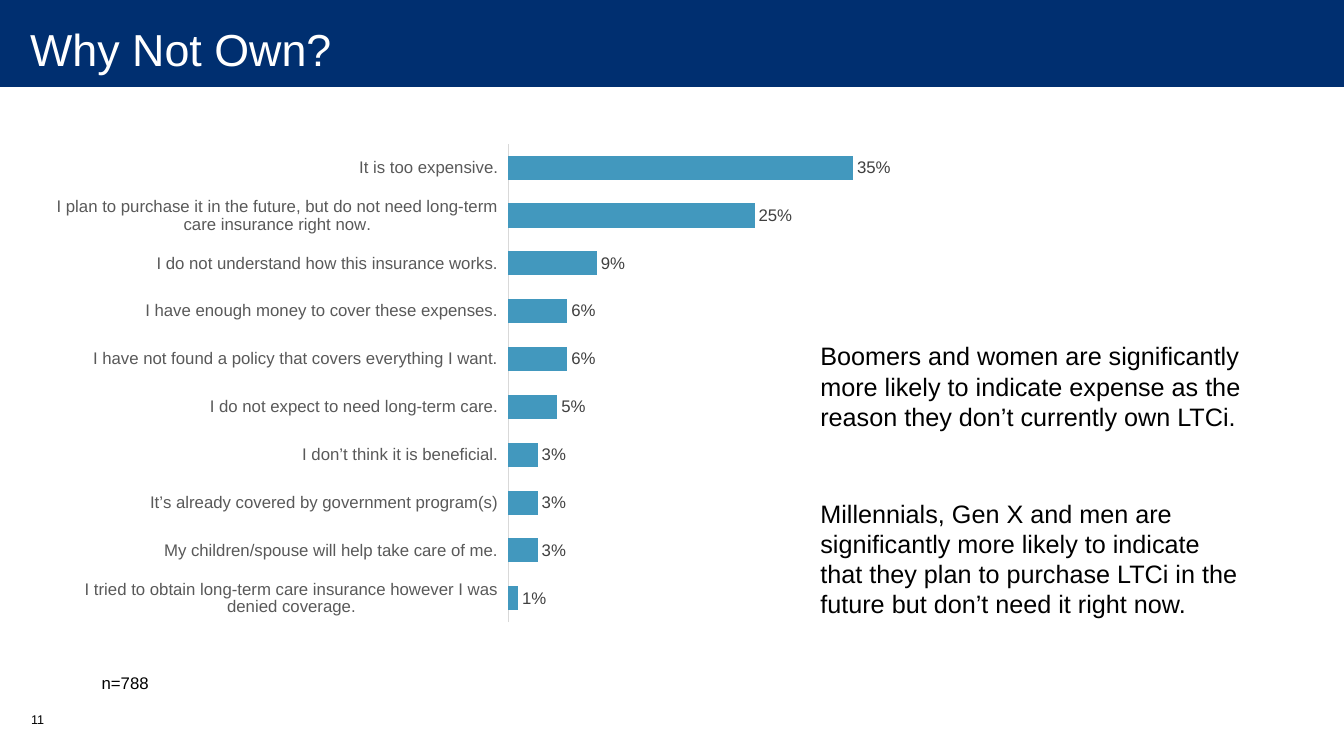
from lxml import etree
from pptx import Presentation
from pptx.chart.data import CategoryChartData
from pptx.dml.color import RGBColor
from pptx.enum.chart import XL_CHART_TYPE, XL_LABEL_POSITION, XL_TICK_LABEL_POSITION, XL_TICK_MARK
from pptx.enum.shapes import MSO_SHAPE
from pptx.enum.text import MSO_ANCHOR
from pptx.oxml.ns import qn
from pptx.util import Pt

BAR_CLUSTERED = XL_CHART_TYPE.BAR_CLUSTERED
OUTSIDE_END = XL_LABEL_POSITION.OUTSIDE_END
LABELS_LOW = XL_TICK_LABEL_POSITION.LOW
NO_TICKS = XL_TICK_MARK.NONE
RECTANGLE = MSO_SHAPE.RECTANGLE
TOP, MIDDLE, BOTTOM = MSO_ANCHOR.TOP, MSO_ANCHOR.MIDDLE, MSO_ANCHOR.BOTTOM

TITLE = "Why Not Own?"
REASONS = [  # from the top bar down
    ("It is too expensive.", 0.35),
    ("I plan to purchase it in the future, but do not need long-term care insurance right now.", 0.25),
    ("I do not understand how this insurance works.", 0.09),
    ("I have enough money to cover these expenses.", 0.06),
    ("I have not found a policy that covers everything I want.", 0.06),
    ("I do not expect to need long-term care.", 0.05),
    ("I don’t think it is beneficial.", 0.03),
    ("It’s already covered by government program(s)", 0.03),
    ("My children/spouse will help take care of me.", 0.03),
    ("I tried to obtain long-term care insurance however I was denied coverage.", 0.01),
]
FINDINGS = [  # top, height, text
    (239.8, 72.7, "Boomers and women are significantly more likely to indicate expense as the "
                  "reason they don’t currently own LTCi."),
    (352.1, 94.3, "Millennials, Gen X and men are significantly more likely to indicate that they "
                  "plan to purchase LTCi in the future but don’t need it right now."),
]
SAMPLE_SIZE = "n=788"
PAGE_NUMBER = "11"

FONT = "Arial"
COLORS = {"banner": "002F70", "title": "FFFFFF", "text": "000000", "bar": "4298BE",
          "category": "595959", "value": "404040", "axis": "D9D9D9"}
WIDTH, HEIGHT = 960, 540
CHART_BOX = (32.4, 87.8, 628.6, 363.6)
PLOT = {"x": 0.526, "y": 0.041, "w": 0.448, "h": 0.94}  # fractions of the chart


def color(name):
    return RGBColor.from_string(COLORS[name])


def set_font(font, size, name):
    font.name = FONT
    font.size = Pt(size)
    font.color.rgb = color(name)


def add_text(slide, box, text, size, name="text", anchor=TOP, insets=(7.2, 3.6, 7.2, 3.6)):
    frame = slide.shapes.add_textbox(*map(Pt, box)).text_frame
    frame.word_wrap = True
    frame.vertical_anchor = anchor
    frame.margin_left, frame.margin_top, frame.margin_right, frame.margin_bottom = map(Pt, insets)
    run = frame.paragraphs[0].add_run()
    run.text = text
    set_font(run.font, size, name)


def fix_plot_area(chart):
    """Pin the inner plot area, so that the category labels get a fixed width."""
    plot_area = chart._chartSpace.chart.plotArea
    for old_layout in plot_area.findall(qn("c:layout")):
        plot_area.remove(old_layout)
    layout = etree.Element(qn("c:layout"))
    manual = etree.SubElement(layout, qn("c:manualLayout"))
    settings = [("layoutTarget", "inner"), ("xMode", "edge"), ("yMode", "edge"), *PLOT.items()]
    for tag, value in settings:
        etree.SubElement(manual, qn(f"c:{tag}")).set("val", str(value))
    plot_area.insert(0, layout)


def add_reasons_chart(slide):
    data = CategoryChartData(number_format="0%")
    labels, shares = zip(*reversed(REASONS))
    data.categories = labels
    data.add_series("Series 1", shares)
    chart = slide.shapes.add_chart(BAR_CLUSTERED, *map(Pt, CHART_BOX), data).chart
    chart.has_legend = False
    chart.has_title = False
    set_font(chart.font, 10, "text")
    fix_plot_area(chart)

    category_axis = chart.category_axis
    category_axis.major_tick_mark = category_axis.minor_tick_mark = NO_TICKS
    category_axis.tick_label_position = LABELS_LOW
    category_axis.format.line.color.rgb = color("axis")
    category_axis.format.line.width = Pt(0.75)
    set_font(category_axis.tick_labels.font, 12, "category")

    value_axis = chart.value_axis
    value_axis.minimum_scale, value_axis.maximum_scale = 0, 0.4
    value_axis.has_major_gridlines = False
    value_axis.visible = False

    plot = chart.plots[0]
    plot.gap_width = 99
    plot.vary_by_categories = False
    fill = plot.series[0].format.fill
    fill.solid()
    fill.fore_color.rgb = color("bar")
    plot.has_data_labels = True
    data_labels = plot.data_labels
    data_labels.show_value = True
    data_labels.number_format = "0%"
    data_labels.number_format_is_linked = False
    data_labels.position = OUTSIDE_END
    set_font(data_labels.font, 12, "value")


def main():
    presentation = Presentation()
    presentation.slide_width, presentation.slide_height = Pt(WIDTH), Pt(HEIGHT)
    slide = presentation.slides.add_slide(presentation.slide_layouts[6])

    banner = slide.shapes.add_shape(RECTANGLE, 0, 0, Pt(WIDTH), Pt(62))
    banner.shadow.inherit = False
    banner.fill.solid()
    banner.fill.fore_color.rgb = color("banner")
    banner.line.fill.background()
    add_text(slide, (0, 0, WIDTH, 70), TITLE, 32, "title", MIDDLE, (21.6, 0, 14.4, 0))

    add_reasons_chart(slide)
    for top, height, finding in FINDINGS:
        add_text(slide, (578.9, top, 317.5, height), finding, 18)
    add_text(slide, (65.5, 446.4, 68.4, 51.8), SAMPLE_SIZE, 12, anchor=BOTTOM)
    add_text(slide, (15.1, 504.7, 35.3, 28.8), PAGE_NUMBER, 9)
    presentation.save("out.pptx")


if __name__ == "__main__":
    main()
